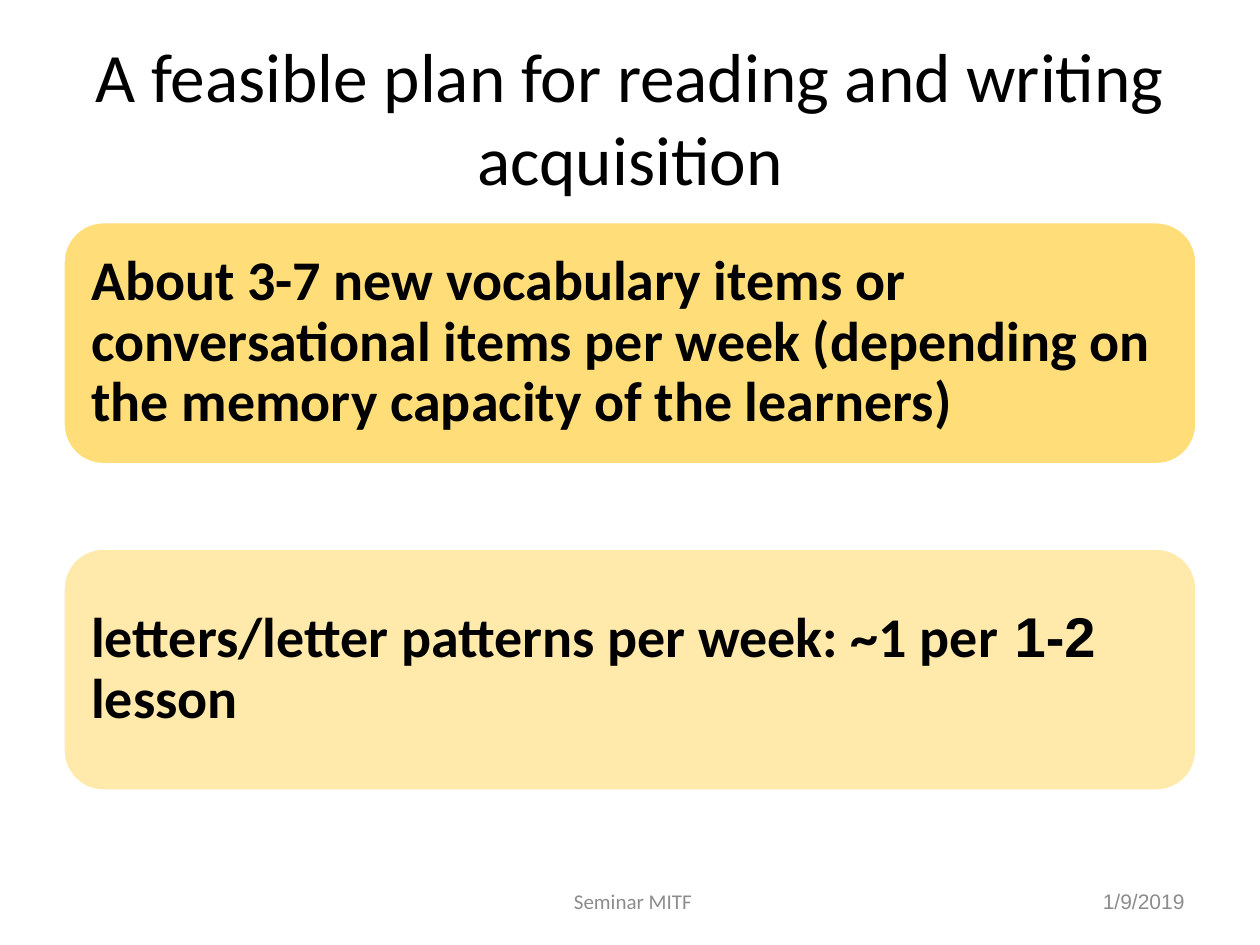
import pptx
import pptx.dml.color
import pptx.enum.shapes
import pptx.enum.text
import pptx.oxml
import pptx.oxml.ns
import pptx.util
from dataclasses import dataclass

Cm = pptx.util.Cm
Pt = pptx.util.Pt
RGB = pptx.dml.color.RGBColor.from_string
ALIGN = pptx.enum.text.PP_ALIGN
MIDDLE = pptx.enum.text.MSO_ANCHOR.MIDDLE


@dataclass(frozen=True)
class Theme:
    font: str = "Calibri"
    cs_font: str = "Arial"
    ink: str = "000000"
    muted: str = "8C8C8C"
    amber: str = "FFC000"
    white: str = "FFFFFF"
    title: float = 39.6
    body: float = 32
    small: float = 12


THEME = Theme()


def add_xml(parent, tag, **attrs):
    el = pptx.oxml.parse_xml(f"<a:{tag} {pptx.oxml.ns.nsdecls('a')}/>")
    for name, value in attrs.items():
        el.set(name, value)
    parent.append(el)


def write_text(sp, text, size, color, align, bold=False, rtl=True, inset=None, **para):
    tf = sp.text_frame
    frame = {"word_wrap": True, "vertical_anchor": MIDDLE}
    if inset is not None:
        sides = ("left", "right", "top", "bottom")
        frame.update({f"margin_{side}": inset for side in sides})
    for name, value in frame.items():
        setattr(tf, name, value)
    p = tf.paragraphs[0]
    for name, value in {"alignment": align, **para}.items():
        setattr(p, name, value)
    if rtl:
        p._p.get_or_add_pPr().set("rtl", "1")
    r = p.add_run()
    r.text = text
    for name, value in {"name": THEME.font, "size": Pt(size), "bold": bold}.items():
        setattr(r.font, name, value)
    r.font.color.rgb = RGB(color)
    add_xml(r._r.get_or_add_rPr(), "cs", typeface=THEME.cs_font)


def add_title(s, x, y, w, h):
    sp = s.shapes.add_textbox(Cm(x), Cm(y), Cm(w), Cm(h))
    write_text(sp, "A feasible plan for reading and writing acquisition",
               THEME.title, THEME.ink, ALIGN.CENTER)


def add_card(s, x, y, w, h, text, opacity, rtl):
    kind = pptx.enum.shapes.MSO_SHAPE.ROUNDED_RECTANGLE
    sp = s.shapes.add_shape(kind, Cm(x), Cm(y), Cm(w), Cm(h))
    sp.shadow.inherit = False
    sp.fill.solid()
    sp.fill.fore_color.rgb = RGB(THEME.amber)
    color = sp._element.spPr.find(".//" + pptx.oxml.ns.qn("a:srgbClr"))
    add_xml(color, "alpha", val=str(opacity * 1000))
    sp.line.color.rgb = RGB(THEME.white)
    sp.line.width = Pt(2)
    write_text(sp, text, THEME.body, THEME.ink, ALIGN.LEFT, bold=True, rtl=rtl,
               inset=Cm(0.33), line_spacing=0.9, space_after=Pt(11.2))


def add_plan(s, x, y, w, h):
    cards = [
        ("About 3-7 new vocabulary items or conversational items per week "
         "(depending on the memory capacity of the learners)", 52, False),
        ("1-2 letters/letter patterns per week: ~1 per lesson", 33, True),
    ]
    card_h = 4.9
    step = (h - card_h) / (len(cards) - 1)
    for i, (text, opacity, rtl) in enumerate(cards):
        add_card(s, x, y + i * step, w, card_h, text, opacity, rtl)


def add_footer(s, x, y, w, h):
    date_w, seminar_w = 5.92, 8.05
    parts = [
        ("1/9/2019", x + w - date_w, date_w, ALIGN.RIGHT),
        ("Seminar MITF ", x + (w - seminar_w) / 2, seminar_w, ALIGN.CENTER),
    ]
    for text, left, width, align in parts:
        sp = s.shapes.add_textbox(Cm(left), Cm(y), Cm(width), Cm(h))
        write_text(sp, text, THEME.small, THEME.muted, align)


def main():
    prs = pptx.Presentation()
    prs.slide_width, prs.slide_height = Cm(25.4), Cm(19.05)
    s = prs.slides.add_slide(prs.slide_layouts[6])
    x, w = 1.27, 22.86
    add_title(s, x, 0.76, w, 3.18)
    add_plan(s, x, 4.47, w, 11.48)
    add_footer(s, x, 17.65, w, 1.02)
    prs.save("out.pptx")


if __name__ == "__main__":
    main()
